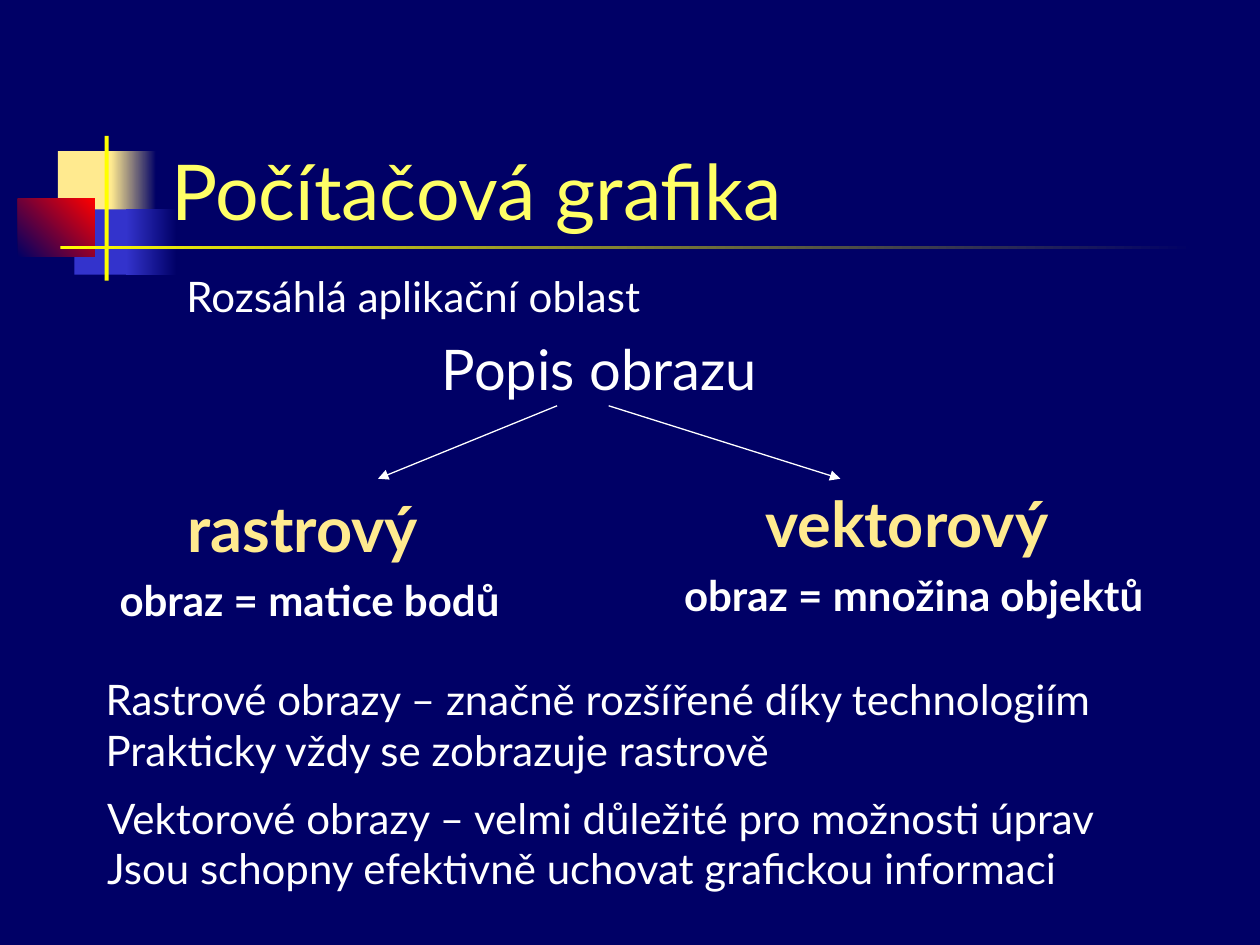
from lxml import etree
from pptx import Presentation
from pptx.dml.color import RGBColor
from pptx.enum.shapes import MSO_CONNECTOR, MSO_SHAPE
from pptx.enum.text import MSO_ANCHOR, MSO_AUTO_SIZE, PP_ALIGN
from pptx.oxml.ns import qn
from pptx.util import Cm, Pt

RECTANGLE = MSO_SHAPE.RECTANGLE
STRAIGHT = MSO_CONNECTOR.STRAIGHT
TOP, BOTTOM = MSO_ANCHOR.TOP, MSO_ANCHOR.BOTTOM
LEFT, CENTER = PP_ALIGN.LEFT, PP_ALIGN.CENTER
GROW = MSO_AUTO_SIZE.SHAPE_TO_FIT_TEXT
FONT = "Lato"
COLORS = {
    "navy": "000066",
    "cream": "FFEA8F",
    "blue": "3333CC",
    "red": "FF0000",
    "yellow": "FFFF00",
    "title": "FFFF66",
    "white": "FFFFFF",
}


def rgb(name):
    return RGBColor.from_string(COLORS[name])


def add_text(box, lines, anchor=TOP, align=LEFT, wrap=True, grow=False):
    """Add a text box; each line is (text, size, colour, bold, space before)."""
    frame = slide.shapes.add_textbox(*map(Cm, box)).text_frame
    frame.word_wrap = wrap
    frame.vertical_anchor = anchor
    if grow:
        frame.auto_size = GROW
    for i, (text, size, color, bold, before) in enumerate(lines):
        paragraph = frame.add_paragraph() if i else frame.paragraphs[0]
        paragraph.text = text
        paragraph.alignment = align
        paragraph.space_before = Pt(before)
        paragraph.font.name = FONT
        paragraph.font.size = Pt(size)
        paragraph.font.bold = bold
        paragraph.font.color.rgb = rgb(color)


presentation = Presentation()
presentation.slide_width, presentation.slide_height = Cm(25.4), Cm(19.05)
slide = presentation.slides.add_slide(presentation.slide_layouts[6])
slide.background.fill.solid()
slide.background.fill.fore_color.rgb = rgb("navy")

# Corner ornament and title rule: box, colours, gradient angle
ornament = [
    ((1.17, 3.05, 1.22, 1.32), ["cream"], 0),
    ((2.24, 3.05, 0.91, 1.32), ["cream", "navy"], 0),
    ((1.5, 4.22, 1.17, 1.32), ["blue"], 0),
    ((2.54, 4.22, 1.02, 1.32), ["blue", "navy"], 0),
    ((0.36, 4.01, 1.55, 1.17), ["navy", "red"], 45),
    ((2.11, 2.74, 0.08, 2.92), ["yellow"], 0),
    ((1.22, 4.95, 22.86, 0.08), ["yellow", "navy"], 0),
]
for box, colors, angle in ornament:
    block = slide.shapes.add_shape(RECTANGLE, *map(Cm, box))
    block.shadow.inherit = False
    block.line.fill.background()
    if len(colors) == 1:
        block.fill.solid()
        block.fill.fore_color.rgb = rgb(colors[0])
    else:
        block.fill.gradient()
        block.fill.gradient_angle = angle
        for stop, color, position in zip(block.fill.gradient_stops, colors, (0, 1)):
            stop.color.rgb = rgb(color)
            stop.position = position

# Headings
add_text((3.2, 2.57, 21.64, 2.31),
         [("Počítačová grafika", 44, "title", False, 0)], anchor=BOTTOM)
add_text((3.51, 5.33, 11.81, 1.3),
         [("Rozsáhlá aplikační oblast", 24, "white", False, 0)], grow=True)
add_text((8.66, 6.53, 7.11, 1.7),
         [("Popis obrazu", 32, "white", False, 0)], anchor=BOTTOM)

# Two kinds of image description
branches = [
    ((0.84, 9.75, 10.8, 3.73), "rastrový ", "obraz = matice bodů"),
    ((12.07, 9.65, 12.7, 3.81), "vektorový ", "obraz = množina objektů"),
]
for box, kind, definition in branches:
    add_text(box, [(kind, 36, "cream", True, 7),
                   (definition, 24, "white", True, 5)], align=CENTER)

# Arrows to the two kinds
for start_x, end_x in [(11.23, 7.62), (12.27, 16.94)]:
    arrow = slide.shapes.add_connector(
        STRAIGHT, Cm(start_x), Cm(8.18), Cm(end_x), Cm(9.65))
    arrow.line.color.rgb = rgb("white")
    arrow.line.width = Pt(0.75)
    properties = arrow.element.spPr
    etree.SubElement(properties.find(qn("a:ln")), qn("a:tailEnd"), type="triangle")
    etree.SubElement(properties, qn("a:effectLst"))

# Closing remarks
remarks = [
    (1.88, 13.46, ["Rastrové obrazy – značně rozšířené díky technologiím",
                   "Prakticky vždy se zobrazuje rastrově"]),
    (1.91, 15.85, ["Vektorové obrazy – velmi důležité pro možnosti úprav",
                   "Jsou schopny efektivně uchovat grafickou informaci"]),
]
for left, top, sentences in remarks:
    add_text((left, top, 20.68, 2.31),
             [(sentence, 24, "white", False, 0) for sentence in sentences],
             wrap=False, grow=True)

presentation.save("out.pptx")
